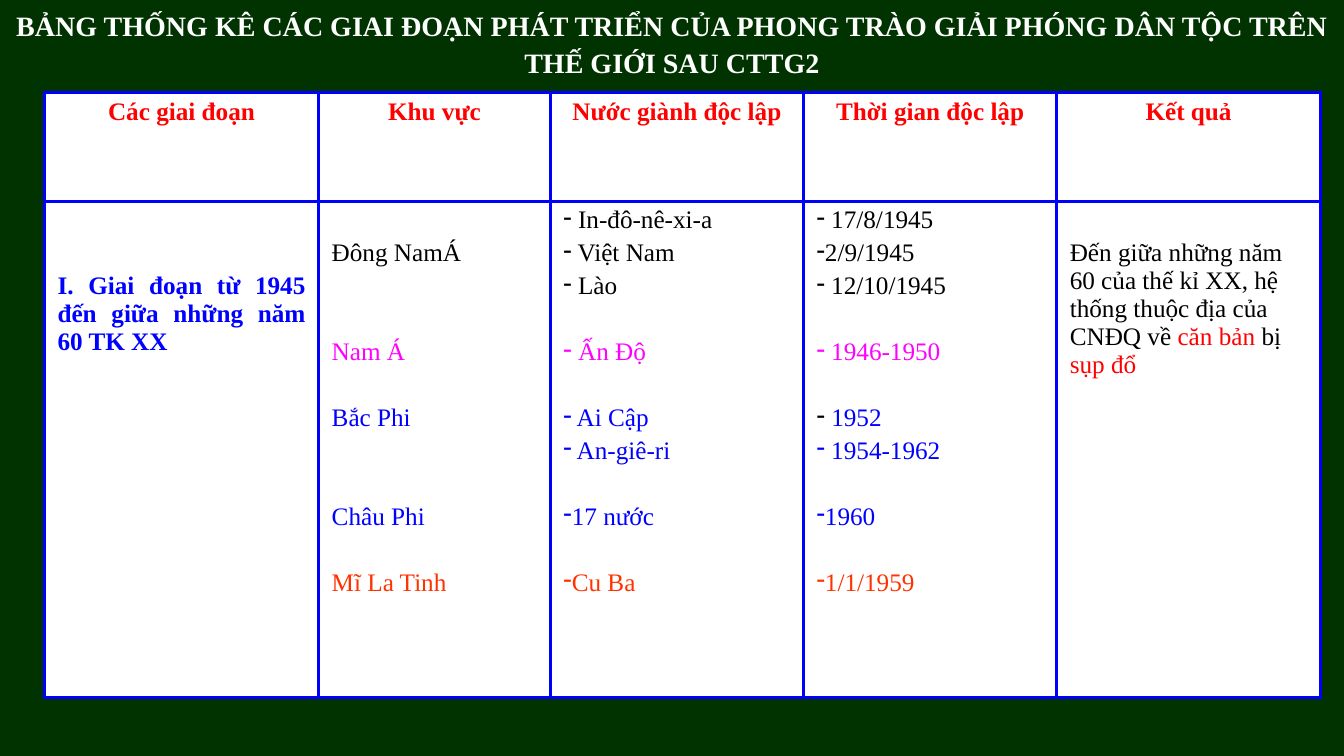
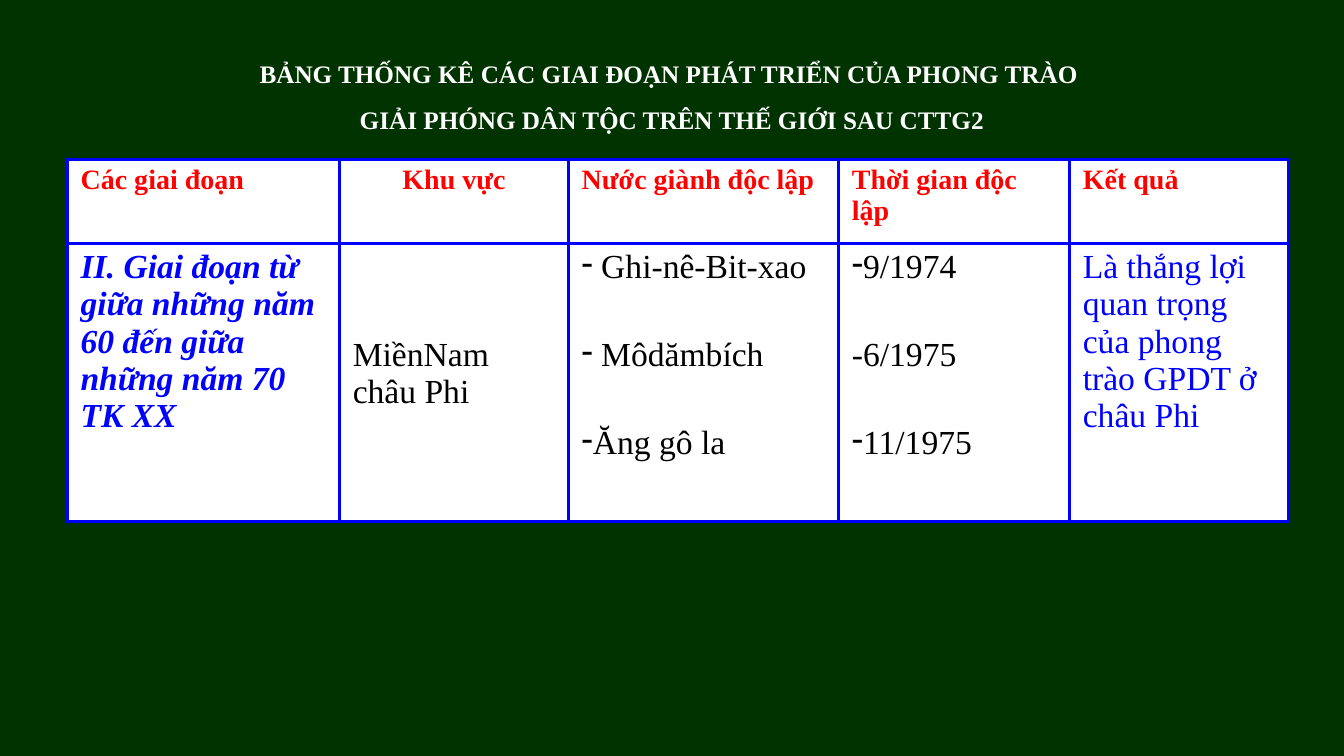
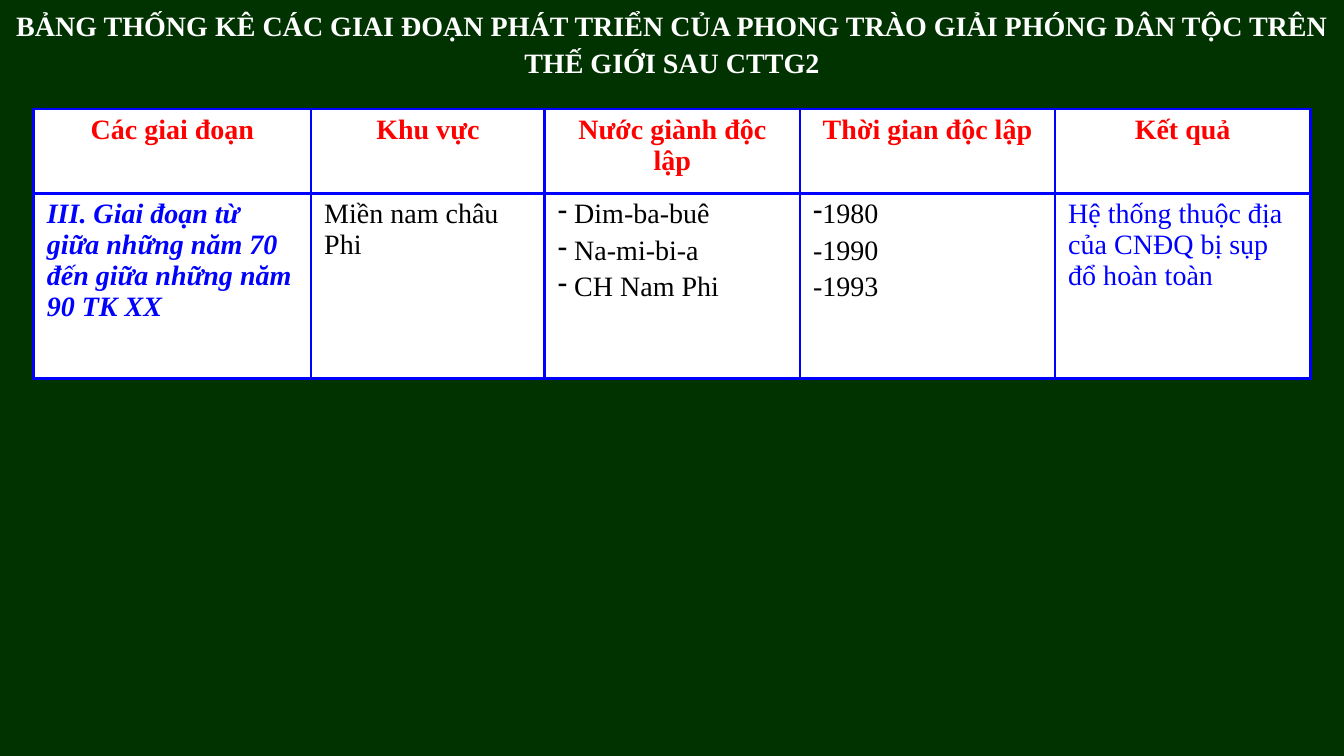
from dataclasses import dataclass

from lxml import etree
from pptx import Presentation
from pptx.dml.color import RGBColor
from pptx.enum.text import MSO_ANCHOR, MSO_AUTO_SIZE, PP_ALIGN
from pptx.oxml.ns import qn
from pptx.slide import Slide
from pptx.table import _Cell
from pptx.util import Cm, Pt

LEFT = PP_ALIGN.LEFT
CENTER = PP_ALIGN.CENTER
JUSTIFY = PP_ALIGN.JUSTIFY
TOP = MSO_ANCHOR.TOP
NO_AUTOFIT = MSO_AUTO_SIZE.NONE

GREEN = RGBColor(0x00, 0x33, 0x00)
WHITE = RGBColor(0xFF, 0xFF, 0xFF)
BLACK = RGBColor(0x00, 0x00, 0x00)
RED = RGBColor(0xFF, 0x00, 0x00)
BLUE = RGBColor(0x00, 0x00, 0xFF)
MAGENTA = RGBColor(0xFF, 0x00, 0xFF)
ORANGE = RGBColor(0xFF, 0x33, 0x00)

FONT = "Times New Roman"
SLIDE_WIDTH = Cm(33.87)
SLIDE_HEIGHT = Cm(19.05)
TITLE_ONLY = 5
BORDER_WIDTH = Pt(2.25)
SIDE_MARGIN = Cm(0.33)
TOP_MARGIN = Cm(0.13)
SPACE_BEFORE = 0.2
LINE_PITCH = 1.31

HEADERS = ("Các giai đoạn", "Khu vực", "Nước giành độc lập", "Thời gian độc lập", "Kết quả")
LONG_TITLE = (
    "BẢNG THỐNG KÊ CÁC GIAI ĐOẠN PHÁT TRIỂN CỦA PHONG TRÀO "
    "GIẢI PHÓNG DÂN TỘC TRÊN THẾ GIỚI SAU CTTG2"
)
SPLIT_TITLE = (
    "BẢNG THỐNG KÊ CÁC GIAI ĐOẠN PHÁT TRIỂN CỦA PHONG TRÀO \n"
    "GIẢI PHÓNG DÂN TỘC TRÊN THẾ GIỚI SAU CTTG2"
)


@dataclass(frozen=True)
class Piece:
    text: str
    color: RGBColor = BLACK


@dataclass(frozen=True)
class Line:
    pieces: tuple[Piece, ...]
    gap: int = 0
    bullet: bool = False


@dataclass(frozen=True)
class CellText:
    lines: tuple[Line, ...]
    alignment: PP_ALIGN = LEFT
    bold: bool = False
    italic: bool = False


@dataclass(frozen=True)
class Title:
    text: str
    top: float
    height: float
    size: int


@dataclass(frozen=True)
class Stage:
    title: Title
    left: float
    top: float
    columns: tuple[float, ...]
    rows: tuple[float, float]
    header_size: int
    header_alignments: tuple[PP_ALIGN, ...]
    body_size: int
    body: tuple[CellText, ...]


def plain(text: str, color: RGBColor = BLACK, gap: int = 0) -> Line:
    return Line((Piece(text, color),), gap)


def dash(text: str, color: RGBColor = BLACK, gap: int = 0) -> Line:
    return Line((Piece(text, color),), gap, True)


TOP_TITLE = Title(LONG_TITLE, 0, 1.95, 20)

STAGES = (
    Stage(
        TOP_TITLE, 1.12, 2.33, (6.91, 5.84, 6.38, 6.38, 6.65), (2.74, 12.5),
        18, (CENTER,) * 5, 18,
        (
            CellText(
                (plain("I. Giai đoạn từ 1945 đến giữa những năm 60 TK XX", BLUE, 2),),
                JUSTIFY, bold=True,
            ),
            CellText((
                plain("Đông NamÁ", gap=1),
                plain("Nam Á", MAGENTA, 2),
                plain("Bắc Phi", BLUE, 1),
                plain("Châu Phi", BLUE, 2),
                plain("Mĩ La Tinh", ORANGE, 1),
            )),
            CellText((
                dash(" In-đô-nê-xi-a"),
                dash(" Việt Nam"),
                dash(" Lào"),
                dash(" Ấn Độ", MAGENTA, 1),
                dash(" Ai Cập", BLUE, 1),
                dash(" An-giê-ri", BLUE),
                dash("17 nước", BLUE, 1),
                dash("Cu Ba", ORANGE, 1),
            )),
            CellText((
                dash(" 17/8/1945"),
                dash("2/9/1945"),
                dash(" 12/10/1945"),
                dash(" 1946-1950", MAGENTA, 1),
                Line((Piece(" "), Piece("1952", BLUE)), 1, True),
                dash(" 1954-1962", BLUE),
                dash("1960", BLUE, 1),
                dash("1/1/1959", ORANGE, 1),
            )),
            CellText((
                Line((
                    Piece("Đến giữa những năm 60 của thế kỉ XX, hệ thống thuộc địa của CNĐQ về "),
                    Piece("căn bản ", RED),
                    Piece("bị "),
                    Piece("sụp đổ", RED),
                ), 1),
            )),
        ),
    ),
    Stage(
        Title(SPLIT_TITLE, 1.27, 2.16, 18),
        1.7, 4.02, (6.86, 5.77, 6.81, 5.82, 5.51), (2.12, 7.01),
        20, (LEFT, CENTER, LEFT, LEFT, LEFT), 24,
        (
            CellText(
                (plain("II. Giai đoạn từ giữa những năm 60 đến giữa những năm 70 TK XX", BLUE),),
                bold=True, italic=True,
            ),
            CellText((plain("MiềnNam châu Phi", gap=2),), JUSTIFY),
            CellText((
                dash(" Ghi-nê-Bit-xao"),
                dash(" Môdămbích", gap=1),
                dash("Ăng gô la", gap=1),
            )),
            CellText((
                dash("9/1974"),
                plain("-6/1975", gap=1),
                dash("11/1975", gap=1),
            )),
            CellText((plain("Là thắng lợi quan trọng của phong trào GPDT ở châu Phi", BLUE),)),
        ),
    ),
    Stage(
        TOP_TITLE, 0.85, 2.75, (6.99, 5.89, 6.43, 6.43, 6.43), (2.12, 4.66),
        20, (CENTER,) * 5, 20,
        (
            CellText(
                (plain("III. Giai đoạn từ giữa những năm 70 đến giữa những năm 90 TK XX", BLUE),),
                bold=True, italic=True,
            ),
            CellText((plain("Miền nam châu Phi"),)),
            CellText((dash(" Dim-ba-buê"), dash(" Na-mi-bi-a"), dash(" CH Nam Phi"))),
            CellText((dash("1980"), plain("-1990"), plain("-1993"))),
            CellText((plain("Hệ thống thuộc địa của CNĐQ bị sụp đổ hoàn toàn", BLUE),)),
        ),
    ),
)


def format_font(font, size: int, color: RGBColor, bold: bool, italic: bool = False) -> None:
    font.name = FONT
    font.size = Pt(size)
    font.bold = bold
    font.italic = italic
    font.color.rgb = color


def add_dash_bullet(paragraph) -> None:
    properties = paragraph._p.get_or_add_pPr()
    properties.set("marL", "0")
    properties.set("indent", "0")
    etree.SubElement(properties, qn("a:buFontTx"))
    etree.SubElement(properties, qn("a:buChar"), char="-")


def add_borders(cell: _Cell) -> None:
    properties = cell._tc.get_or_add_tcPr()
    for side in ("a:lnL", "a:lnR", "a:lnT", "a:lnB"):
        border = etree.SubElement(properties, qn(side), w=str(int(BORDER_WIDTH)))
        fill = etree.SubElement(border, qn("a:solidFill"))
        etree.SubElement(fill, qn("a:srgbClr"), val=str(BLUE))


def fill_cell(cell: _Cell, content: CellText, size: int) -> None:
    add_borders(cell)
    cell.fill.solid()
    cell.fill.fore_color.rgb = WHITE
    cell.margin_left = cell.margin_right = SIDE_MARGIN
    cell.margin_bottom = TOP_MARGIN
    cell.margin_top = TOP_MARGIN + Pt(content.lines[0].gap * LINE_PITCH * size)
    cell.vertical_anchor = TOP
    frame = cell.text_frame
    for index, line in enumerate(content.lines):
        paragraph = frame.add_paragraph() if index else frame.paragraphs[0]
        paragraph.alignment = content.alignment
        gap = line.gap if index else 0
        paragraph.space_before = Pt((SPACE_BEFORE + gap * LINE_PITCH) * size)
        if line.bullet:
            add_dash_bullet(paragraph)
        for piece in line.pieces:
            run = paragraph.add_run()
            run.text = piece.text
            format_font(run.font, size, piece.color, content.bold, content.italic)


def set_title(slide: Slide, title: Title) -> None:
    shape = slide.shapes.title
    shape.left, shape.top = Cm(0), Cm(title.top)
    shape.width, shape.height = SLIDE_WIDTH, Cm(title.height)
    frame = shape.text_frame
    frame.text = title.text
    frame.word_wrap = True
    frame.auto_size = NO_AUTOFIT
    frame.vertical_anchor = TOP
    for index, paragraph in enumerate(frame.paragraphs):
        paragraph.alignment = CENTER
        paragraph.line_spacing = 1.1
        paragraph.space_before = Pt(title.size / 2 if index else 0)
        for run in paragraph.runs:
            format_font(run.font, title.size, WHITE, True)


def add_stage_table(slide: Slide, stage: Stage) -> None:
    table = slide.shapes.add_table(
        len(stage.rows), len(stage.columns), Cm(stage.left), Cm(stage.top),
        Cm(sum(stage.columns)), Cm(sum(stage.rows)),
    ).table
    table.first_row = False
    table.horz_banding = False
    for column, width in zip(table.columns, stage.columns):
        column.width = Cm(width)
    for row, height in zip(table.rows, stage.rows):
        row.height = Cm(height)
    for index, (header, alignment) in enumerate(zip(HEADERS, stage.header_alignments)):
        heading = CellText((plain(header, RED),), alignment, bold=True)
        fill_cell(table.cell(0, index), heading, stage.header_size)
        fill_cell(table.cell(1, index), stage.body[index], stage.body_size)


def main() -> None:
    presentation = Presentation()
    presentation.slide_width = SLIDE_WIDTH
    presentation.slide_height = SLIDE_HEIGHT
    background = presentation.slide_master.background.fill
    background.solid()
    background.fore_color.rgb = GREEN
    for stage in STAGES:
        slide = presentation.slides.add_slide(presentation.slide_layouts[TITLE_ONLY])
        add_stage_table(slide, stage)
        set_title(slide, stage.title)
    presentation.save("out.pptx")


if __name__ == "__main__":
    main()
